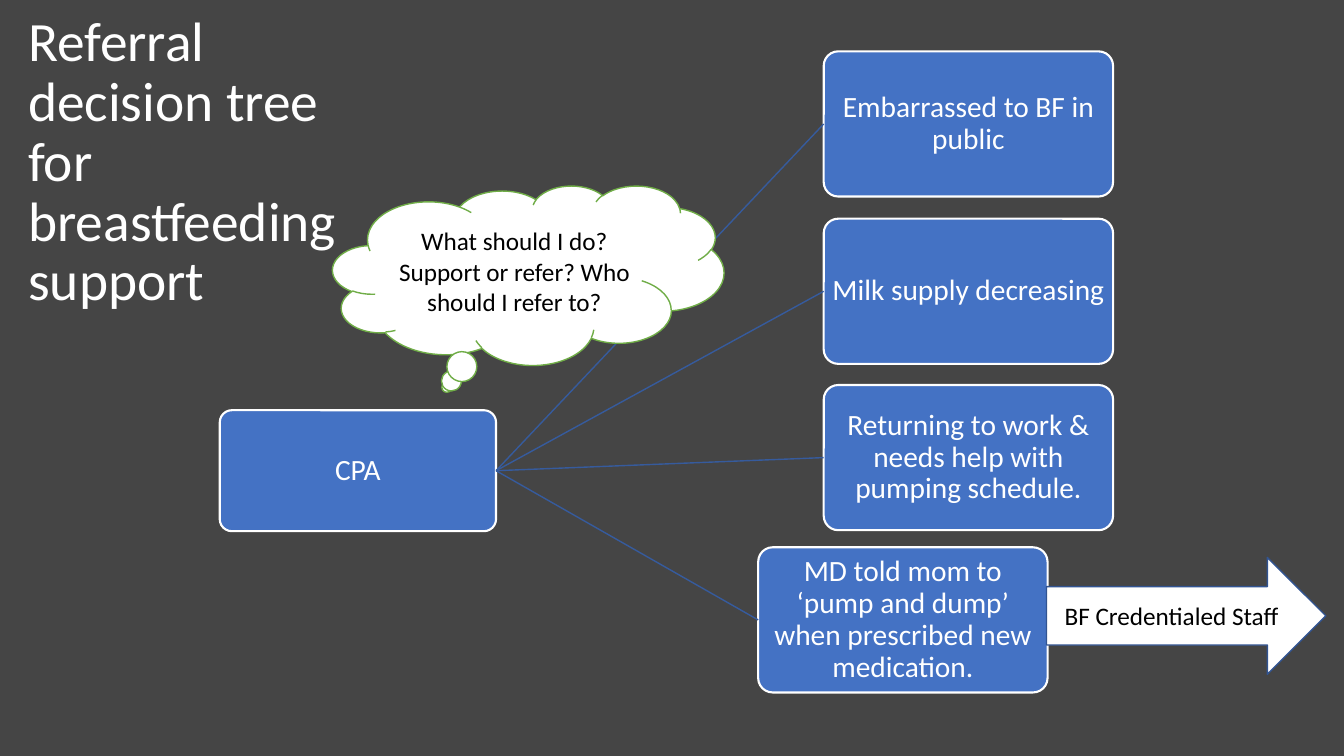
from pptx import Presentation
from pptx.dml.color import RGBColor
from pptx.enum.shapes import MSO_CONNECTOR, MSO_SHAPE
from pptx.enum.text import MSO_ANCHOR, MSO_AUTO_SIZE, PP_ALIGN
from pptx.oxml.ns import qn
from pptx.util import Inches, Pt
from lxml.etree import SubElement

FONT = "Calibri"
HUES = {
    "back": "454545", "white": "FFFFFF", "black": "000000", "blue": "4472C4",
    "link": "365B9D", "green": "70AD47", "edge": "325491",
}
LEFT, RIGHT = 1, 3
NEEDS = [
    (8.17, 0.51, "Embarrassed to BF in public"),
    (8.17, 2.17, "Milk supply decreasing"),
    (8.17, 3.82, "Returning to work & needs help with pumping schedule."),
    (7.52, 5.43, "MD told mom to ‘pump and dump’ when prescribed new medication."),
]


def tint(name):
    return RGBColor.from_string(HUES[name])


def write(frame, lines, size, hue, align=PP_ALIGN.CENTER, space=None):
    frame.word_wrap = True
    frame.auto_size = MSO_AUTO_SIZE.NONE
    frame.vertical_anchor = MSO_ANCHOR.MIDDLE
    for num, line in enumerate(lines):
        para = frame.add_paragraph() if num else frame.paragraphs[0]
        para.alignment = align
        para.line_spacing = space
        run = para.add_run()
        run.text = line
        run.font.name = FONT
        run.font.size = Pt(size)
        run.font.color.rgb = tint(hue)


def add_form(slide, kind, box, fill, line, width):
    form = slide.shapes.add_shape(kind, *map(Inches, box))
    form.shadow.inherit = False
    form.fill.solid()
    form.fill.fore_color.rgb = tint(fill)
    form.line.color.rgb = tint(line)
    form.line.width = Pt(width)
    return form


def add_title(slide, box):
    title = slide.shapes.title
    title.left, title.top, title.width, title.height = map(Inches, box)
    write(title.text_frame, ["Referral decision tree for breastfeeding support"],
          39.6, "white", PP_ALIGN.LEFT, 0.9)


def add_node(slide, box, text):
    node = add_form(slide, MSO_SHAPE.ROUNDED_RECTANGLE, box, "blue", "white", 1.5)
    node.adjustments[0] = 0.1
    frame = node.text_frame
    frame.margin_left = frame.margin_right = Inches(0.01)
    frame.margin_top = frame.margin_bottom = Inches(0.01)
    write(frame, [text], 21, "white", space=0.9)
    return node


def add_link(slide, start, end):
    link = slide.shapes.add_connector(MSO_CONNECTOR.STRAIGHT, 0, 0, 0, 0)
    link.begin_connect(start, RIGHT)
    link.end_connect(end, LEFT)
    link.line.color.rgb = tint("link")
    link.line.width = Pt(1)
    SubElement(link._element.spPr, qn("a:effectLst"))


def add_tree(slide, root_box, size):
    root = add_node(slide, root_box, "CPA")
    for left, top, text in NEEDS:
        add_link(slide, root, add_node(slide, (left, top, *size), text))


def add_cloud(slide, box):
    cloud = add_form(slide, MSO_SHAPE.CLOUD_CALLOUT, box, "white", "green", 1)
    lines = ["What should I do?", "Support or refer? Who should I refer to?"]
    write(cloud.text_frame, lines, 18, "black")


def add_arrow(slide, box):
    arrow = add_form(slide, MSO_SHAPE.RIGHT_ARROW, box, "white", "edge", 1)
    write(arrow.text_frame, ["BF Credentialed Staff"], 18, "black")


def main():
    deck = Presentation()
    deck.slide_width, deck.slide_height = Inches(13.33), Inches(7.5)
    slide = deck.slides.add_slide(deck.slide_layouts[5])
    slide.background.fill.solid()
    slide.background.fill.fore_color.rgb = tint("back")
    add_title(slide, (0.18, 0.4, 3.63, 2.44))
    add_tree(slide, (2.18, 4.07, 2.74, 1.2), (2.87, 1.44))
    add_cloud(slide, (3.3, 1.84, 3.88, 1.78))
    add_arrow(slide, (10.38, 5.53, 2.77, 1.16))
    deck.save("out.pptx")


if __name__ == "__main__":
    main()
